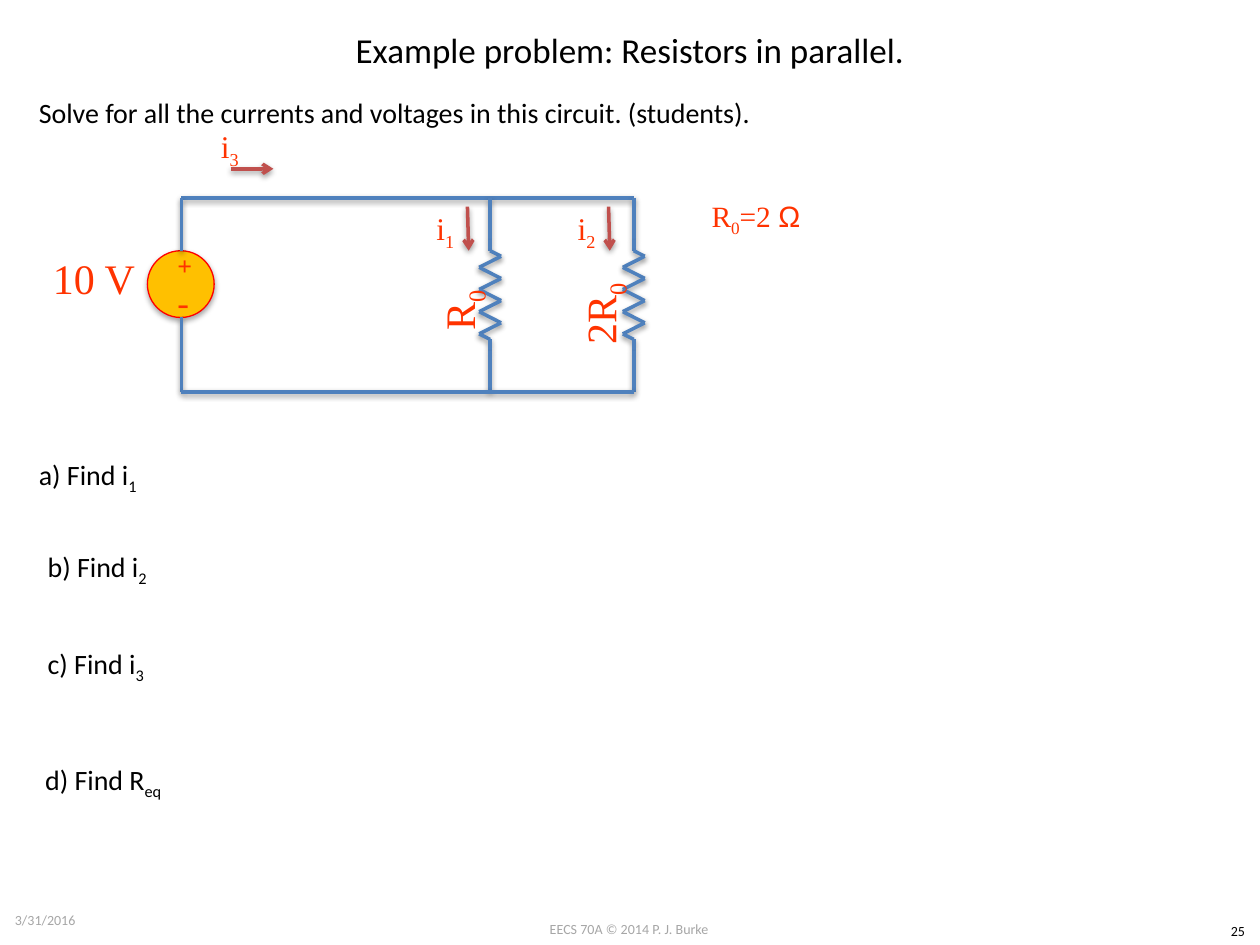
import itertools
from dataclasses import dataclass

import pptx
import pptx.dml.color
import pptx.enum.shapes
import pptx.enum.text
import pptx.oxml.ns
import pptx.util
from lxml import etree

COLS, ROWS = 100, 75  # grid over the slide, one cell is a tenth of an inch
BLUE, BRICK, ORANGE, GREY = "4F81BD", "C0504D", "FF3300", "A6A6A6"
SANS, SERIF = "Calibri", "Times New Roman"
ALIGN = pptx.enum.text.PP_ALIGN
ANCHOR = pptx.enum.text.MSO_ANCHOR

deck = pptx.Presentation()
deck.slide_width = pptx.util.Inches(10)
deck.slide_height = pptx.util.Inches(7.5)
slide = deck.slides.add_slide(deck.slide_layouts[5])


@dataclass
class Box:
    col: float
    row: float
    wide: float
    high: float


@dataclass
class Label:
    text: str
    box: Box
    size: float = 24
    turn: float = 0
    bold: bool = False
    tail: str = ""


def grid_x(col: float) -> int:
    return round(deck.slide_width * col / COLS)


def grid_y(row: float) -> int:
    return round(deck.slide_height * row / ROWS)


def frame(box: Box) -> tuple:
    return grid_x(box.col), grid_y(box.row), grid_x(box.wide), grid_y(box.high)


def color(code: str) -> pptx.dml.color.RGBColor:
    return pptx.dml.color.RGBColor.from_string(code)


def write(text: str, box: Box, *, size: float = 16, font: str = SANS,
          ink: str = "000000", bold: bool = False, align=ALIGN.LEFT,
          anchor=ANCHOR.TOP, wrap: bool = True, turn: float = 0,
          tail: str = "", shape=None) -> None:
    """Write text; every second part between bars is a subscript."""
    if shape is None:
        shape = slide.shapes.add_textbox(*frame(box))
    else:
        shape.left, shape.top, shape.width, shape.height = frame(box)
    shape.rotation = turn
    body = shape.text_frame
    body.word_wrap = wrap
    body.vertical_anchor = anchor
    para = body.paragraphs[0]
    para.alignment = align
    parts = [(part, font, i % 2) for i, part in enumerate(text.split("|"))]
    if tail:
        parts.append((tail, "Arial", 0))
    for part, face, low in parts:
        run = para.add_run()
        run.text = part
        run.font.size = pptx.util.Pt(size)
        run.font.name = face
        run.font.bold = bold
        run.font.color.rgb = color(ink)
        if low:
            run.font._element.set("baseline", "-25000")


def wire(start: tuple, end: tuple, ink: str = BLUE, arrow: bool = False,
         shapes=slide.shapes) -> None:
    """Draw a line that keeps the soft shadow of the theme."""
    line = shapes.add_connector(
        pptx.enum.shapes.MSO_CONNECTOR.STRAIGHT,
        grid_x(start[0]), grid_y(start[1]), grid_x(end[0]), grid_y(end[1]))
    line.line.color.rgb = color(ink)
    line.line.width = pptx.util.Pt(2)
    if arrow:
        head = etree.SubElement(line.line._get_or_add_ln(),
                                pptx.oxml.ns.qn("a:tailEnd"))
        head.set("type", "arrow")


# Circuit measures
LEFT, MID, RIGHT = 14.4, 38.9, 50.3
TOP, BASE = 15.7, 31.1
COIL, STEP, SWING = 19.9, 0.88, 0.87


def resist(col: float) -> None:
    """Draw a zigzag resistor with its leads from top to bottom rail."""
    end = COIL + 8 * STEP
    teeth = [(col + SWING * (-1) ** i, COIL + STEP * (i + 0.5))
             for i in range(8)]
    points = [(col, TOP), (col, COIL - STEP), (col, COIL), *teeth,
              (col, end), (col, end + STEP), (col, BASE)]
    group = slide.shapes.add_group_shape()
    for start, stop in itertools.pairwise(points):
        wire(start, stop, shapes=group.shapes)


# Title, task and footer
write("Example problem: Resistors in parallel.", Box(5, 0, 90, 7.8), size=20,
      align=ALIGN.CENTER, anchor=ANCHOR.MIDDLE, shape=slide.shapes.title)
write("Solve for all the currents and voltages in this circuit. (students).",
      Box(2.1, 7.1, 59.2, 3.7), wrap=False)
write("EECS 70A © 2014 P. J. Burke", Box(38.3, 72.6, 23.3, 2.4), size=8,
      ink=GREY, align=ALIGN.CENTER)
write("25", Box(96.5, 72.7, 3.5, 2.4), size=8, align=ALIGN.CENTER)
write("3/31/2016", Box(0.2, 71, 23.3, 4), size=8, ink=GREY,
      anchor=ANCHOR.MIDDLE)

# Rails, resistors and source
wire((RIGHT, TOP), (LEFT, TOP))
for col in (MID, RIGHT):
    resist(col)
cell = slide.shapes.add_shape(pptx.enum.shapes.MSO_SHAPE.OVAL,
                              *frame(Box(11.7, 19.9, 5.3, 5.3)))
cell.fill.solid()
cell.fill.fore_color.rgb = color("FFC000")
cell.line.color.rgb = color("FF0000")
cell.line.width = pptx.util.Pt(0.75)
wire((LEFT, BASE), (LEFT, 25.2))
wire((LEFT, 19.9), (LEFT, TOP))
wire((RIGHT, BASE), (LEFT, BASE))

# Current arrows
for start, end in (((37.1, 16.4), (37.2, 19.9)),
                   ((48.3, 16.4), (48.4, 19.9)),
                   ((18.3, 13.4), (21.7, 13.4))):
    wire(start, end, BRICK, arrow=True)

# Circuit labels
LABELS = (
    Label("10 V", Box(3.1, 19.6, 8.7, 4.9)),
    Label("+", Box(13.1, 19.4, 2.6, 3.3), 14.8, bold=True),
    Label("-", Box(13.1, 22.3, 2.6, 3.3), 20),
    Label("i|1", Box(30.7, 15.7, 9.3, 5.2), 18),
    Label("i|2", Box(41.9, 15.7, 9.3, 5.2), 18),
    Label("i|3", Box(13.6, 9.2, 9.3, 5.2), 18),
    Label("R|0", Box(32.6, 22.1, 8.1, 5), turn=270),
    Label("2R|0", Box(43.8, 22.4, 8.1, 5), turn=270),
    Label("R|0|=2 ", Box(55, 14.7, 10, 5.2), 16.8, tail="Ω"),
)
for item in LABELS:
    write(item.text, item.box, size=item.size, font=SERIF, ink=ORANGE,
          bold=item.bold, align=ALIGN.CENTER, anchor=ANCHOR.MIDDLE,
          turn=item.turn, tail=item.tail)

# Questions
for text, col, row, wide in (("a) Find i|1", 2.1, 35.8, 10.3),
                             ("b) Find i|2", 2.8, 43.1, 10),
                             ("c) Find i|3", 2.8, 50.8, 9.8),
                             ("d) Find R|eq", 2.6, 60, 11.5)):
    write(text, Box(col, row, wide, 3.7), wrap=False)

deck.save("out.pptx")
